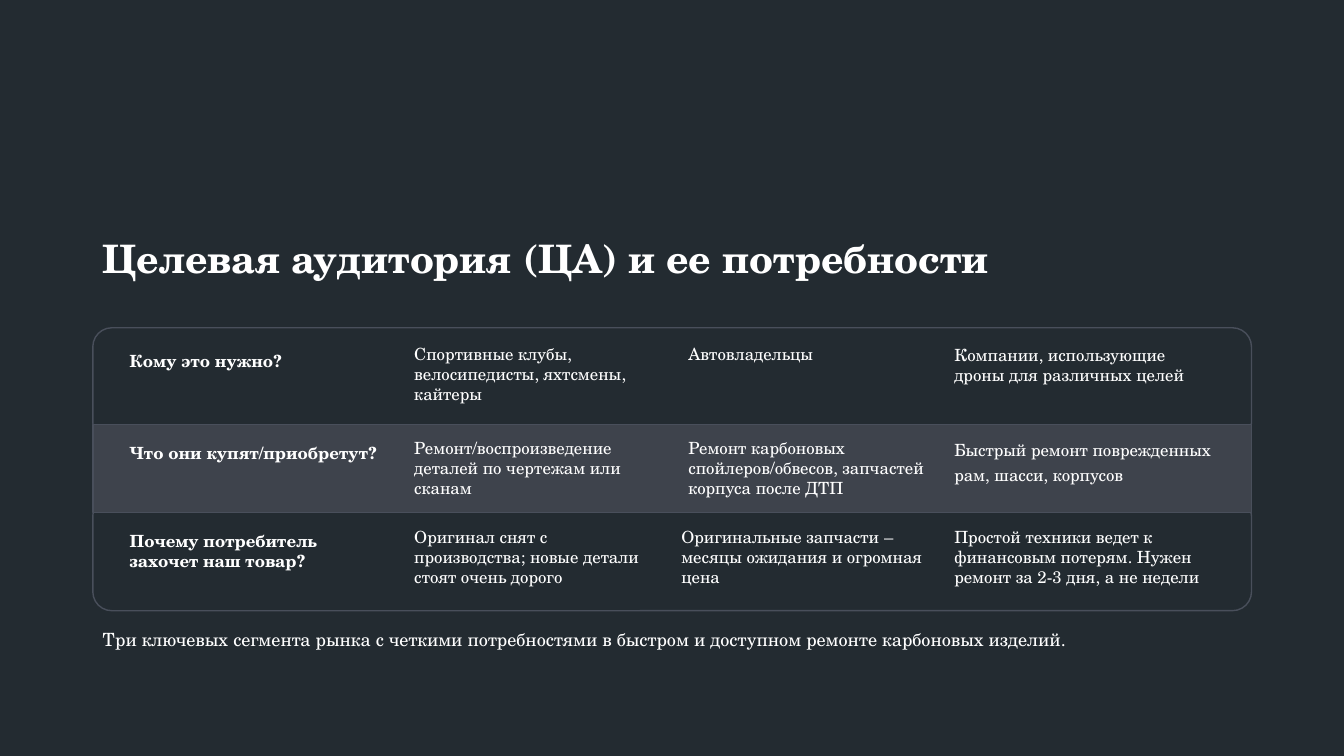
import pptx
import pptx.util
import pptx.dml.color
import pptx.enum.shapes
import pptx.enum.text

Cm = pptx.util.Cm
Pt = pptx.util.Pt
SHAPE = pptx.enum.shapes.MSO_SHAPE
ANCHOR = pptx.enum.text.MSO_ANCHOR

FONT = "TeX Gyre Schola"
DARK, BAND, EDGE, WHITE = "232B31", "3E434C", "494F5B", "FFFFFF"
COLUMN_LEFTS = (0.68, 7.85, 14.76, 21.46)
COLUMN_WIDTHS = (7.0, 6.5, 6.73, 7.1)
LAST_ROW_LEFTS = (0.68, 7.85, 14.58, 21.46)
SINGLE = (None, None, None, None)

ROWS = [
    (0, COLUMN_LEFTS, (0.46, 0.28, 0.28, 0.3), SINGLE,
     ("Кому это нужно?",
      "Спортивные клубы, велосипедисты, яхтсмены, кайтеры",
      "Автовладельцы",
      "Компании, использующие дроны для различных целей")),
    (2.44, COLUMN_LEFTS, (0.33, 0.2, 0.2, 0.1), (None, None, None, Pt(18.5)),
     ("Что они купят/приобретут?",
      "Ремонт/воспроизведение деталей по чертежам или сканам",
      "Ремонт карбоновых спойлеров/обвесов, запчастей корпуса после ДТП",
      "Быстрый ремонт поврежденных рам, шасси, корпусов")),
    (4.65, LAST_ROW_LEFTS, (0.33, 0.23, 0.23, 0.23), SINGLE,
     ("Почему потребитель захочет наш товар?",
      "Оригинал снят с производства; новые детали стоят очень дорого",
      "Оригинальные запчасти – месяцы ожидания и огромная цена",
      "Простой техники ведет к финансовым потерям. "
      "Нужен ремонт за 2-3 дня, а не недели")),
]


def color(value):
    return pptx.dml.color.RGBColor.from_string(value)


def add_text(s, left, top, width, height, text, size, bold=False,
             spacing=None, anchor=ANCHOR.TOP):
    sp = s.shapes.add_textbox(Cm(left), Cm(top), Cm(width), Cm(height))
    tf = sp.text_frame
    tf.word_wrap = True
    tf.vertical_anchor = anchor
    p = tf.paragraphs[0]
    if spacing is not None:
        p.line_spacing = spacing
    r = p.add_run()
    r.text = text
    r.font.name = FONT
    r.font.size = Pt(size)
    r.font.bold = bold
    r.font.color.rgb = color(WHITE)


def add_panel(s, kind, left, top, width, height, fill):
    sp = s.shapes.add_shape(kind, Cm(left), Cm(top), Cm(width), Cm(height))
    sp.shadow.inherit = False
    sp.fill.solid()
    sp.fill.fore_color.rgb = color(fill)
    sp.line.color.rgb = color(EDGE)
    sp.line.width = Pt(1)


def add_title(s, left, top, width, height):
    add_text(s, left, top, width, height,
             "Целевая аудитория (ЦА) и ее потребности", 28, True, 0.9,
             ANCHOR.MIDDLE)


def add_audience_grid(s, left, top, width, height):
    card = 2.87
    for card_top in (top, top + height - card):
        add_panel(s, SHAPE.ROUNDED_RECTANGLE, left, card_top, width, card, DARK)
    add_panel(s, SHAPE.RECTANGLE, left, top + 2.44, width, 2.21, BAND)
    for row_top, lefts, drops, spacings, texts in ROWS:
        cells = zip(lefts, COLUMN_WIDTHS, drops, spacings, texts)
        for i, (x, cell_width, drop, spacing, text) in enumerate(cells):
            add_text(s, left + x, top + row_top + drop, cell_width, 2.06,
                     text, 12, i == 0, spacing)


def add_summary(s, left, top, width, height):
    add_text(s, left, top, width, height,
             "Три ключевых сегмента рынка с четкими потребностями в быстром "
             "и доступном ремонте карбоновых изделий.", 13)


def main():
    prs = pptx.Presentation()
    prs.slide_width = Cm(33.87)
    prs.slide_height = Cm(19.05)
    s = prs.slides.add_slide(prs.slide_layouts[6])
    s.background.fill.solid()
    s.background.fill.fore_color.rgb = color(DARK)
    add_title(s, 2.34, 5.28, 29.2, 2.6)
    add_audience_grid(s, 2.34, 8.26, 29.2, 7.13)
    add_summary(s, 2.34, 15.7, 26.92, 1.57)
    prs.save("out.pptx")


if __name__ == "__main__":
    main()
